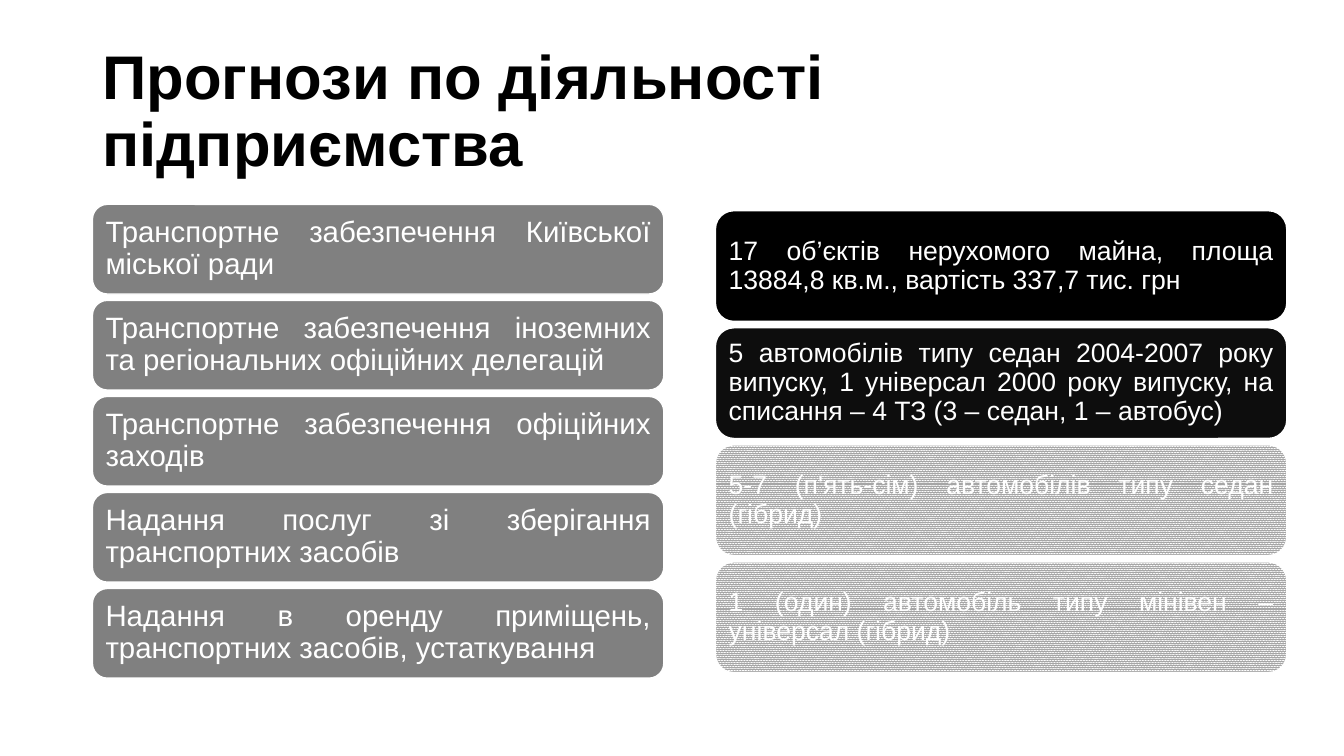
from pptx import Presentation
from pptx.dml.color import RGBColor
from pptx.enum.dml import MSO_PATTERN
from pptx.enum.shapes import MSO_SHAPE
from pptx.enum.text import MSO_ANCHOR, PP_ALIGN
from pptx.util import Cm, Pt

TITLE = "Прогнози по діяльності підприємства"

# (text, fill name in THEME)
SERVICES = [
    ("Транспортне забезпечення Київської міської ради", "grey"),
    ("Транспортне забезпечення іноземних та регіональних офіційних делегацій", "grey"),
    ("Транспортне забезпечення офіційних заходів", "grey"),
    ("Надання послуг зі зберігання транспортних засобів", "grey"),
    ("Надання в оренду приміщень, транспортних засобів, устаткування", "grey"),
]
ASSETS = [
    ("17 об’єктів нерухомого майна, площа 13884,8 кв.м., вартість 337,7 тис. грн", "black"),
    ("5 автомобілів типу седан 2004-2007 року випуску, 1 універсал 2000 року випуску, "
     "на списання – 4 ТЗ (3 – седан, 1 – автобус)", "soft_black"),
    ("5-7 (п'ять-сім) автомобілів типу седан (гібрид)", "pattern"),
    ("1 (один) автомобіль типу мінівен – універсал (гібрид)", "pattern"),
]

THEME = {
    "font": "Arial",
    "black": RGBColor(0x00, 0x00, 0x00),
    "soft_black": RGBColor(0x0D, 0x0D, 0x0D),
    "grey": RGBColor(0x80, 0x80, 0x80),
    "pattern": RGBColor(0xA6, 0xA6, 0xA6),
    "white": RGBColor(0xFF, 0xFF, 0xFF),
    "title_size": Pt(44),
    "service_size": Pt(21),
    "asset_size": Pt(19),
}

CARD_WIDTH = 14.4
# Lengths in centimetres; step is the distance between card tops
COLUMNS = [
    {"cards": SERVICES, "left": 2.33, "top": 5.15, "height": 2.26, "step": 2.42,
     "inset": 0.22, "size": "service_size"},
    {"cards": ASSETS, "left": 18.03, "top": 5.31, "height": 2.79, "step": 2.95,
     "inset": 0.2, "size": "asset_size"},
]


def set_attrs(obj, values):
    for name, value in values.items():
        setattr(obj, name, value)


def write(tf, text, size, color, bold, align):
    tf.text = text
    p = tf.paragraphs[0]
    set_attrs(p, {"alignment": align, "line_spacing": 0.9, "space_before": Pt(0)})
    font = p.runs[0].font
    set_attrs(font, {"name": THEME["font"], "size": THEME[size], "bold": bold})
    font.color.rgb = THEME[color]


def paint(fill, name):
    if name == "pattern":
        fill.patterned()
        fill.pattern = MSO_PATTERN.PERCENT_90
        fill.fore_color.rgb = THEME[name]
        fill.back_color.rgb = THEME["white"]
    else:
        fill.solid()
        fill.fore_color.rgb = THEME[name]


def add_title(slide):
    sp = slide.shapes.title
    set_attrs(sp, {"left": Cm(2.33), "top": Cm(1.01), "width": Cm(29.21), "height": Cm(3.68)})
    set_attrs(sp.text_frame, {"vertical_anchor": MSO_ANCHOR.MIDDLE, "word_wrap": True})
    write(sp.text_frame, TITLE, "title_size", "black", True, PP_ALIGN.LEFT)


def add_column(slide, col):
    inset = Cm(col["inset"])
    for i, (text, fill) in enumerate(col["cards"]):
        sp = slide.shapes.add_shape(
            MSO_SHAPE.ROUNDED_RECTANGLE, Cm(col["left"]), Cm(col["top"] + i * col["step"]),
            Cm(CARD_WIDTH), Cm(col["height"]))
        sp.shadow.inherit = False
        paint(sp.fill, fill)
        sp.line.color.rgb = THEME["white"]
        sp.line.width = Pt(1)
        set_attrs(sp.text_frame, {
            "margin_left": inset, "margin_right": inset, "margin_top": inset,
            "margin_bottom": inset, "vertical_anchor": MSO_ANCHOR.MIDDLE, "word_wrap": True})
        write(sp.text_frame, text, col["size"], "white", False, PP_ALIGN.JUSTIFY)


def main():
    prs = Presentation()
    set_attrs(prs, {"slide_width": Cm(33.87), "slide_height": Cm(19.05)})
    slide = prs.slides.add_slide(prs.slide_layouts.get_by_name("Title Only"))
    add_title(slide)
    for col in COLUMNS:
        add_column(slide, col)
    prs.save("out.pptx")


if __name__ == "__main__":
    main()
